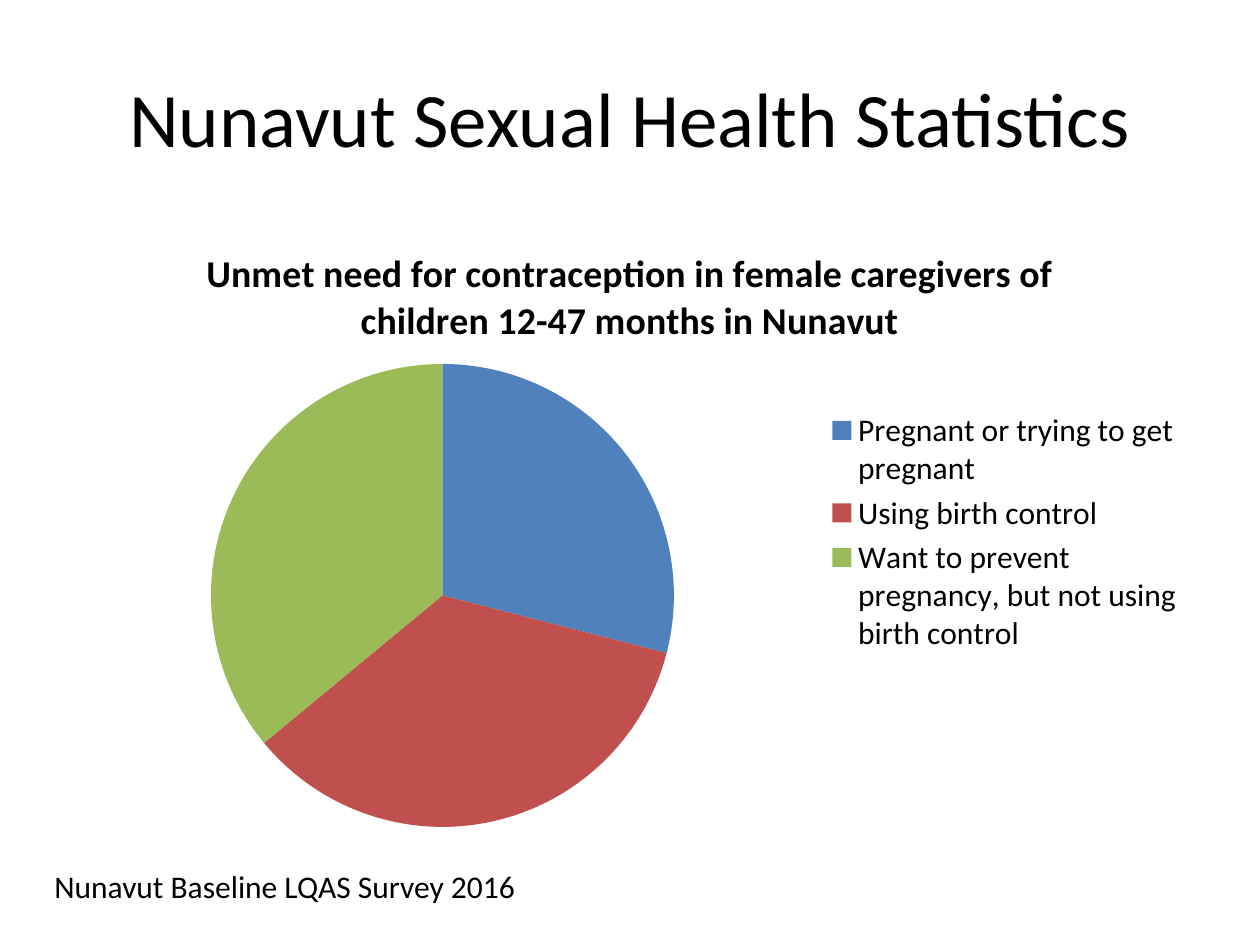
from dataclasses import dataclass

from lxml.etree import SubElement
from pptx import Presentation
from pptx.chart.data import CategoryChartData
from pptx.dml.color import RGBColor
from pptx.enum.chart import XL_CHART_TYPE, XL_LEGEND_POSITION
from pptx.enum.text import MSO_ANCHOR, PP_ALIGN
from pptx.oxml.ns import qn
from pptx.util import Emu, Pt

PIXELS_PER_INCH = 126
SLIDE_SIZE = (1260, 945)
TITLE_BOX = (63, 38, 1134, 157)
CHART_BOX = (63, 220, 1134, 624)
SOURCE_BOX = (42, 861, 514, 50)


@dataclass(frozen=True)
class Theme:
    """Colours and type sizes of the slide."""

    font: str = "Calibri"
    text: str = "000000"
    slices: tuple = ("4F81BD", "C0504D", "9BBB59")
    title_size: float = 44
    chart_title_size: float = 21.6
    body_size: float = 18


THEME = Theme()


def scale(pixels):
    """Turn a length in px into EMU."""
    return Emu(round(pixels * 914400 / PIXELS_PER_INCH))


def style_font(font, size, bold=False):
    """Apply the theme typeface and text colour at the given size."""
    font.name = THEME.font
    font.size = Pt(size)
    font.bold = bold
    font.color.rgb = RGBColor.from_string(THEME.text)


def add_text(slide, box, text, size, alignment, anchor):
    """Place one line of text in a box."""
    frame = slide.shapes.add_textbox(*map(scale, box)).text_frame
    frame.word_wrap = True
    frame.vertical_anchor = anchor
    paragraph = frame.paragraphs[0]
    paragraph.alignment = alignment
    run = paragraph.add_run()
    run.text = text
    style_font(run.font, size)


def place_plot(chart, box):
    """Fix the inner plot area at a px box relative to the chart."""
    plot_area = chart.plots[0]._element.getparent()
    layout = plot_area.find(qn("c:layout"))
    if layout is None:
        layout = SubElement(plot_area, qn("c:layout"))
        plot_area.insert(0, layout)
    manual = SubElement(layout, qn("c:manualLayout"))
    left, top, width, height = box
    chart_width, chart_height = CHART_BOX[2:]
    settings = {
        "layoutTarget": "inner",
        "xMode": "edge",
        "yMode": "edge",
        "x": round(left / chart_width, 4),
        "y": round(top / chart_height, 4),
        "w": round(width / chart_width, 4),
        "h": round(height / chart_height, 4),
    }
    for name, value in settings.items():
        SubElement(manual, qn(f"c:{name}")).set("val", str(value))


def add_contraception_chart(slide, box):
    """Place the pie of contraception need with its title and legend."""
    data = CategoryChartData()
    data.categories = [
        "Pregnant or trying to get pregnant",
        "Using birth control",
        "Want to prevent pregnancy, but not using birth control",
    ]
    data.add_series("Series 1", (29, 35, 36))
    chart = slide.shapes.add_chart(XL_CHART_TYPE.PIE, *map(scale, box), data).chart
    style_font(chart.font, THEME.body_size)

    chart.has_title = True
    run = chart.chart_title.text_frame.paragraphs[0].add_run()
    run.text = (
        "Unmet need for contraception in female caregivers of "
        "children 12-47 months in Nunavut"
    )
    style_font(run.font, THEME.chart_title_size, bold=True)
    chart.chart_title.include_in_layout = False

    chart.has_legend = True
    chart.legend.position = XL_LEGEND_POSITION.RIGHT
    chart.legend.include_in_layout = False
    style_font(chart.legend.font, THEME.body_size)

    plot = chart.plots[0]
    plot.vary_by_categories = True
    for index, color in enumerate(THEME.slices):
        fill = plot.series[0].points[index].format.fill
        fill.solid()
        fill.fore_color.rgb = RGBColor.from_string(color)
    place_plot(chart, (148, 144, 463, 463))


def main():
    """Build and save the slide."""
    presentation = Presentation()
    presentation.slide_width, presentation.slide_height = map(scale, SLIDE_SIZE)
    slide = presentation.slides.add_slide(presentation.slide_layouts[6])
    add_text(slide, TITLE_BOX, "Nunavut Sexual Health Statistics",
             THEME.title_size, PP_ALIGN.CENTER, MSO_ANCHOR.MIDDLE)
    add_contraception_chart(slide, CHART_BOX)
    add_text(slide, SOURCE_BOX, "Nunavut Baseline LQAS Survey 2016",
             THEME.body_size, PP_ALIGN.LEFT, MSO_ANCHOR.TOP)
    presentation.save("out.pptx")


if __name__ == "__main__":
    main()
